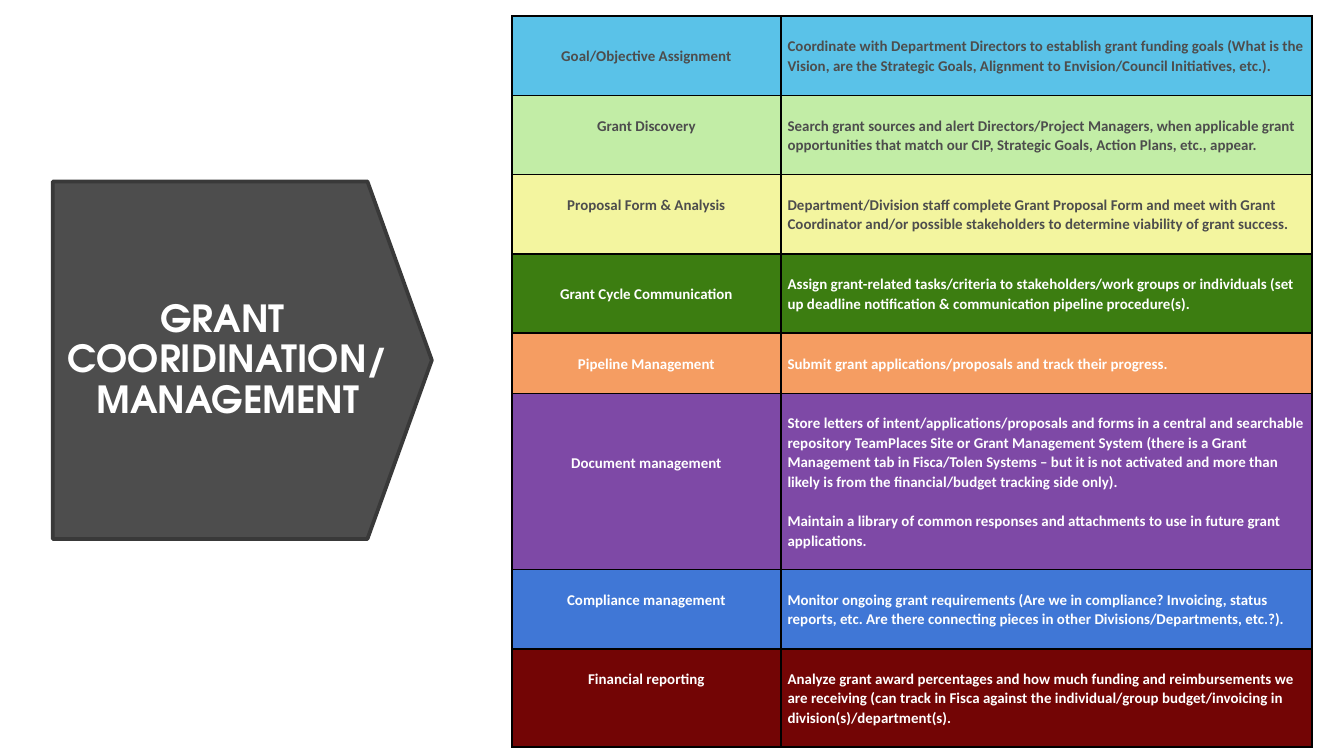
from dataclasses import dataclass

from lxml.etree import SubElement
from pptx import Presentation
from pptx.dml.color import RGBColor
from pptx.enum.shapes import MSO_SHAPE as Shape
from pptx.enum.text import MSO_ANCHOR as Anchor, PP_ALIGN as Align
from pptx.oxml.ns import qn
from pptx.slide import Slide
from pptx.table import _Cell as Cell
from pptx.text.text import TextFrame
from pptx.util import Inches, Pt

WIDTH = Inches(10)
HEIGHT = WIDTH * 9 // 16
WHITE = RGBColor(255, 255, 255)
GRAY = RGBColor(0x4D, 0x4D, 0x4D)
DARK_GRAY = RGBColor(0x39, 0x39, 0x39)
SKY = RGBColor(0x5A, 0xC2, 0xE8)
MINT = RGBColor(0xC2, 0xED, 0xA6)
YELLOW = RGBColor(0xF3, 0xF5, 0x9F)
GREEN = RGBColor(0x3C, 0x7D, 0x11)
ORANGE = RGBColor(0xF5, 0x9D, 0x62)
PURPLE = RGBColor(0x7E, 0x49, 0xA6)
BLUE = RGBColor(0x40, 0x77, 0xD6)
MAROON = RGBColor(0x73, 0x05, 0x05)

LINE_HEIGHT = Pt(10.4)
COLUMNS = (2, 3.95)
TITLE = "GRANT \vCOORIDINATION/\vMANAGEMENT"
TITLE_FONT = {"name": "TeX Gyre Adventor", "size": Pt(20), "bold": True}
CELL_FONT = {"name": "Calibri", "size": Pt(8), "bold": True}


@dataclass
class Stage:
    """A table row, with its label raised by a number of text lines."""

    label: str
    details: str
    fill: RGBColor
    color: RGBColor = WHITE
    height: float = 0.59
    lift: float = 0


STAGES = (
    Stage("Goal/Objective Assignment",
          "Coordinate with Department Directors to establish grant funding goals (What is the "
          "Vision, are the Strategic Goals, Alignment to Envision/Council Initiatives, etc.).",
          SKY, GRAY),
    Stage("Grant Discovery",
          "Search grant sources and alert Directors/Project Managers, when applicable grant "
          "opportunities that match our CIP, Strategic Goals, Action Plans, etc., appear.",
          MINT, GRAY, lift=0.5),
    Stage("Proposal Form & Analysis",
          "Department/Division staff complete Grant Proposal Form and meet with Grant "
          "Coordinator and/or possible stakeholders to determine viability of grant success.",
          YELLOW, GRAY, lift=0.5),
    Stage("Grant Cycle Communication",
          "Assign grant-related tasks/criteria to stakeholders/work groups or individuals (set "
          "up deadline notification & communication pipeline procedure(s).",
          GREEN),
    Stage("Pipeline Management",
          "Submit grant applications/proposals and track their progress.",
          ORANGE, height=0.45),
    Stage("Document management",
          "Store letters of intent/applications/proposals and forms in a central and searchable "
          "repository TeamPlaces Site or Grant Management System (there is a Grant "
          "Management tab in Fisca/Tolen Systems – but it is not activated and more than "
          "likely is from the financial/budget tracking side only).\n"
          "Maintain a library of common responses and attachments to use in future grant "
          "applications.",
          PURPLE, height=1.31, lift=1),
    Stage("Compliance management",
          "Monitor ongoing grant requirements (Are we in compliance? Invoicing, status "
          "reports, etc. Are there connecting pieces in other Divisions/Departments, etc.?).",
          BLUE, lift=0.5),
    Stage("Financial reporting",
          "Analyze grant award percentages and how much funding and reimbursements we "
          "are receiving (can track in Fisca against the individual/group budget/invoicing in "
          "division(s)/department(s).",
          MAROON, height=0.73, lift=1),
)


def percent_box(left: float, top: float, width: float, height: float) -> tuple[int, ...]:
    """Turn percentages of the slide's size into lengths."""
    return tuple(int(share * size / 100) for share, size in
                 zip((left, top, width, height), (WIDTH, HEIGHT) * 2))


def write_text(frame: TextFrame, text: str, font: dict, color: RGBColor,
               align: Align, spacing: float) -> None:
    """Fill a text frame with evenly formatted paragraphs."""
    frame.text = text
    frame.word_wrap = True
    for index, paragraph in enumerate(frame.paragraphs):
        paragraph.alignment = align
        paragraph.line_spacing = spacing
        if index:
            paragraph.space_before = LINE_HEIGHT
        for run in paragraph.runs:
            for name, value in font.items():
                setattr(run.font, name, value)
            run.font.color.rgb = color


def draw_borders(cell: Cell) -> None:
    """Give a cell a thin black line on every side."""
    properties = cell._tc.get_or_add_tcPr()
    for index, side in enumerate(("lnL", "lnR", "lnT", "lnB")):
        line = SubElement(properties, qn(f"a:{side}"), w=str(Pt(1)))
        fill = SubElement(line, qn("a:solidFill"))
        SubElement(fill, qn("a:srgbClr"), val="000000")
        properties.insert(index, line)


def draw_cell(cell: Cell, text: str, stage: Stage, align: Align, lift: float = 0) -> None:
    """Write and colour one table cell."""
    formats = {
        "margin_left": Inches(0.05),
        "margin_right": Inches(0.05),
        "margin_top": 0,
        "margin_bottom": int(2 * lift * LINE_HEIGHT),
        "vertical_anchor": Anchor.MIDDLE,
    }
    for name, value in formats.items():
        setattr(cell, name, value)
    write_text(cell.text_frame, text, CELL_FONT, stage.color, align, 1.07)
    cell.fill.solid()
    cell.fill.fore_color.rgb = stage.fill
    draw_borders(cell)


def draw_table(slide: Slide) -> None:
    """Draw the stages of the grant cycle."""
    height = Inches(sum(stage.height for stage in STAGES))
    table = slide.shapes.add_table(
        len(STAGES), len(COLUMNS), Inches(3.81), Inches(0.12),
        Inches(sum(COLUMNS)), height).table
    for column, width in zip(table.columns, COLUMNS):
        column.width = Inches(width)
    for index, stage in enumerate(STAGES):
        table.rows[index].height = Inches(stage.height)
        draw_cell(table.cell(index, 0), stage.label, stage, Align.CENTER, stage.lift)
        draw_cell(table.cell(index, 1), stage.details, stage, Align.LEFT)


def draw_title(slide: Slide) -> None:
    """Draw the pentagon and the slide title on it."""
    pentagon = slide.shapes.add_shape(Shape.PENTAGON, *percent_box(3.93, 24, 28.2, 47.3))
    pentagon.adjustments[0] = 0.18
    pentagon.shadow.inherit = False
    pentagon.fill.solid()
    pentagon.fill.fore_color.rgb = GRAY
    pentagon.line.color.rgb = DARK_GRAY
    pentagon.line.width = Pt(2)

    title = slide.shapes.add_textbox(*percent_box(3, 29.1, 27.9, 37.2))
    title.text_frame.vertical_anchor = Anchor.MIDDLE
    write_text(title.text_frame, TITLE, TITLE_FONT, WHITE, Align.CENTER, 0.9)


def main() -> None:
    """Build and save the presentation."""
    presentation = Presentation()
    presentation.slide_width, presentation.slide_height = WIDTH, HEIGHT
    slide = presentation.slides.add_slide(presentation.slide_layouts[6])
    draw_title(slide)
    draw_table(slide)
    presentation.save("out.pptx")


if __name__ == "__main__":
    main()
